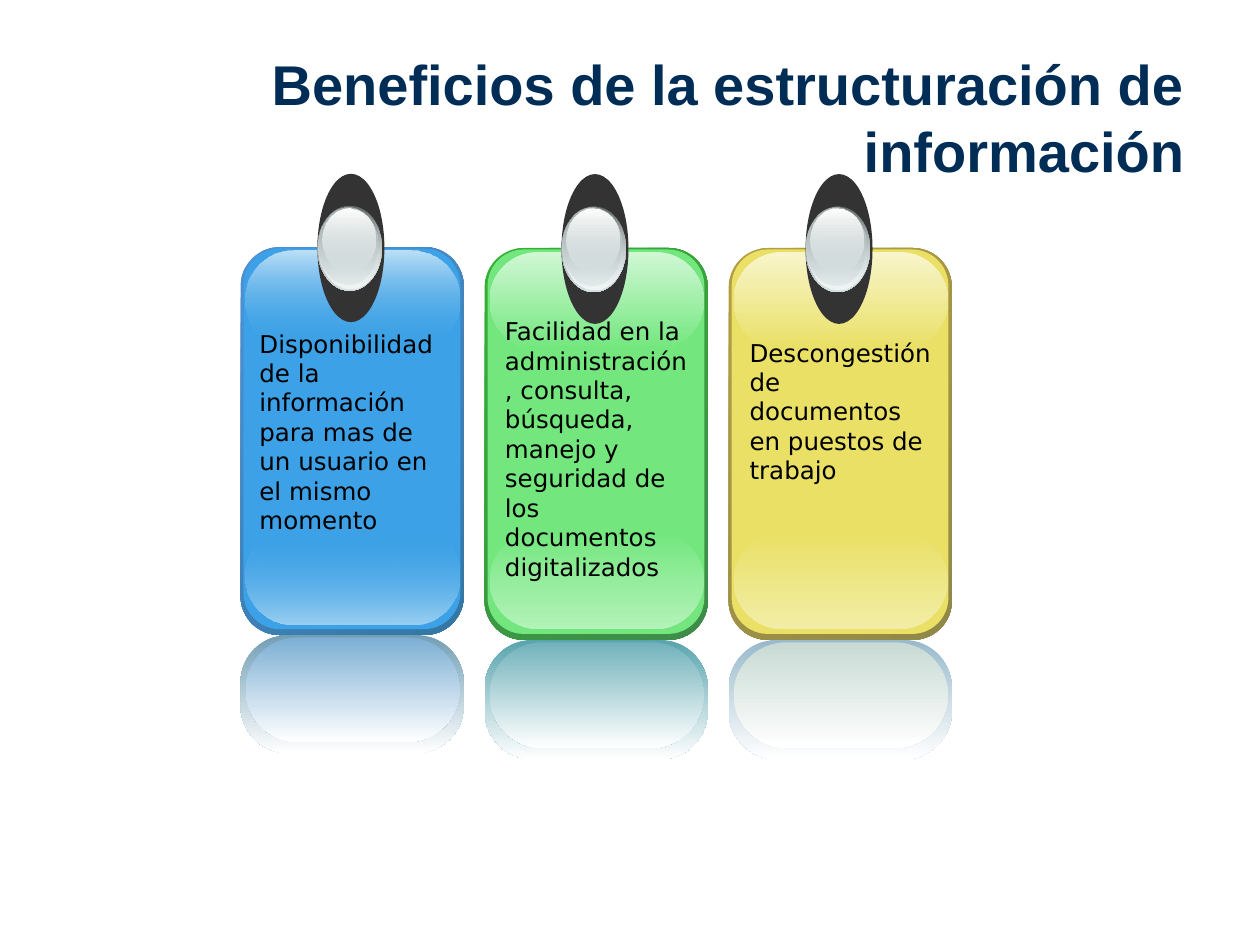
from dataclasses import dataclass
from typing import NamedTuple, Optional

from lxml import etree
from pptx import Presentation
from pptx import util as u
from pptx.dml.color import RGBColor
from pptx.enum import shapes, text
from pptx.oxml.ns import qn

NAVY = RGBColor(0x00, 0x2D, 0x56)
BLACK = RGBColor(0x00, 0x00, 0x00)
WHITE = RGBColor(0xFF, 0xFF, 0xFF)
CHARCOAL = RGBColor(0x33, 0x33, 0x33)
STEEL = RGBColor(0x63, 0x68, 0x69)
GREY = RGBColor(0xAA, 0xB2, 0xB3)
SILVER = RGBColor(0xD6, 0xE1, 0xE2)
PALE = RGBColor(0xF1, 0xF5, 0xF5)

BLUE = RGBColor(0x3C, 0xA1, 0xE6)
BLUE_EDGE = RGBColor(0x4E, 0x91, 0xD4), RGBColor(0x34, 0x77, 0xA4)
BLUE_SHINE = RGBColor(0xBE, 0xE0, 0xF7), RGBColor(0x9B, 0xCF, 0xF2)
BLUE_MIRROR = RGBColor(0x72, 0x9E, 0xB4), RGBColor(0x7D, 0xAF, 0xD4)
GREEN = RGBColor(0x73, 0xE7, 0x7E)
GREEN_EDGE = RGBColor(0x34, 0xB0, 0x34), RGBColor(0x3F, 0x8B, 0x4A)
GREEN_SHINE = RGBColor(0xD0, 0xF7, 0xD4), RGBColor(0xB3, 0xF2, 0xB9)
GREEN_MIRROR = RGBColor(0x58, 0xA4, 0xAE), RGBColor(0x72, 0xB2, 0xBB)
YELLOW = RGBColor(0xE9, 0xE0, 0x65)
YELLOW_EDGE = RGBColor(0xB5, 0x9F, 0x43), RGBColor(0x8F, 0x88, 0x49)
YELLOW_SHINE = RGBColor(0xF8, 0xF5, 0xCC), RGBColor(0xF2, 0xED, 0xA6)
YELLOW_MIRROR = RGBColor(0x99, 0xBA, 0xCC), RGBColor(0xC8, 0xDA, 0xD4)

LEFT, PITCH = 4.85, 4.92  # first card and card spacing, in cm


class Stop(NamedTuple):
    color: RGBColor
    opacity: int = 100


class Layer(NamedTuple):
    """A shape placed in cm from the top left corner of its card."""
    x: float
    y: float
    w: float
    h: float
    start: Stop
    end: Optional[Stop] = None  # no end stop means a solid fill
    corner: Optional[float] = None  # no corner means an ellipse
    angle: int = 90


@dataclass
class Card:
    words: str
    face: RGBColor
    edge: tuple
    shine: tuple  # top, bottom
    mirror: tuple  # outer, inner
    text_x: float
    text_y: float
    text_h: float
    top: float = 5.0
    scale: float = 1.0
    fade: int = 100  # opacity where the shine meets the face


CARDS = [
    Card("Disponibilidad de la información para mas de un usuario en el mismo momento",
         BLUE, BLUE_EDGE, BLUE_SHINE, BLUE_MIRROR, 0.13, 6.5, 4.45,
         top=4.98, scale=0.99, fade=0),
    Card("Facilidad en la administración, consulta, búsqueda, manejo y seguridad "
         "de los documentos digitalizados",
         GREEN, GREEN_EDGE, GREEN_SHINE, GREEN_MIRROR, 0.16, 6.25, 5.64),
    Card("Descongestión de documentos en puestos de trabajo",
         YELLOW, YELLOW_EDGE, YELLOW_SHINE, YELLOW_MIRROR, 0.17, 6.68, 3.25),
]

PIN = [
    Layer(1.55, -1.49, 1.35, 3.02, Stop(CHARCOAL)),
    Layer(1.55, -0.84, 1.3, 1.73, Stop(STEEL), Stop(SILVER)),
    Layer(1.57, -0.84, 1.27, 1.68, Stop(SILVER, 0), Stop(PALE)),
    Layer(1.57, -0.81, 1.19, 1.57, Stop(GREY), Stop(SILVER, 48)),
    Layer(1.65, -0.79, 1.07, 1.27, Stop(WHITE), Stop(SILVER, 38)),
]


def card_layers(c: Card) -> list:
    blend, white = Stop(c.face, c.fade), Stop(WHITE)
    return [
        Layer(0, 0, 4.5, 7.9, Stop(c.edge[0]), Stop(c.edge[1]), 0.175, 45),
        Layer(0.06, 0.03, 4.37, 7.75, Stop(c.face), None, 0.167),
        Layer(0.1, 5.72, 4.32, 1.96, blend, Stop(c.shine[1]), 0.5),
        Layer(0.1, 0.08, 4.32, 1.96, Stop(c.shine[0]), blend, 0.5),
        Layer(0, 7.9, 4.5, 2.41, Stop(c.mirror[0]), white, 0.404),
        Layer(0.1, 7.95, 4.32, 2.13, Stop(c.mirror[1]), white, 0.5),
    ]


def add_layer(parent, layer: Layer, x: float, y: float, scale: float) -> None:
    preset = shapes.MSO_SHAPE.OVAL if layer.corner is None else shapes.MSO_SHAPE.ROUNDED_RECTANGLE
    s = parent.add_shape(preset, u.Cm(x + layer.x), u.Cm(y + layer.y * scale),
                         u.Cm(layer.w), u.Cm(layer.h * scale))
    s.shadow.inherit = False
    s.line.fill.background()
    if layer.corner is not None:
        s.adjustments[0] = layer.corner
    if layer.end is None:
        s.fill.solid()
        s.fill.fore_color.rgb = layer.start.color
        return
    s.fill.gradient()
    s.fill.gradient_angle = 360 - layer.angle
    stops = (layer.start, layer.end)
    for grad_stop, stop in zip(s.fill.gradient_stops, stops):
        grad_stop.color.rgb = stop.color
    for clr, stop in zip(s.element.spPr.iter(qn("a:srgbClr")), stops):
        if stop.opacity < 100:
            etree.SubElement(clr, qn("a:alpha"), val=str(stop.opacity * 1000))


def add_text(parent, words: str, box: tuple, fmt: dict, color: RGBColor,
             align=text.PP_ALIGN.LEFT, anchor=text.MSO_ANCHOR.TOP) -> None:
    tf = parent.add_textbox(*(u.Cm(v) for v in box)).text_frame
    tf.word_wrap = True
    tf.vertical_anchor = anchor
    p = tf.paragraphs[0]
    p.alignment = align
    r = p.add_run()
    r.text = words
    for name, value in fmt.items():
        setattr(r.font, name, value)
    r.font.color.rgb = color


def add_card(parent, c: Card, x: float) -> None:
    group = parent.add_group_shape().shapes
    for layer in card_layers(c) + PIN:
        add_layer(group, layer, x, c.top, c.scale)
    add_text(group, c.words, (x + c.text_x, c.text_y, 4.29, c.text_h),
             {"name": "DejaVu Sans", "size": u.Pt(14)}, BLACK)


def main() -> None:
    prs = Presentation()
    prs.slide_width, prs.slide_height = u.Cm(25.4), u.Cm(19.05)
    slide = prs.slides.add_slide(prs.slide_layouts[6])

    # Title
    add_text(slide.shapes, "Beneficios de la estructuración de información",
             (1.27, 0.76, 22.86, 3.18),
             {"name": "Arial", "size": u.Pt(32), "bold": True}, NAVY,
             text.PP_ALIGN.RIGHT, text.MSO_ANCHOR.MIDDLE)

    # Pinned cards with their reflections
    for i, card in enumerate(CARDS):
        add_card(slide.shapes, card, LEFT + i * PITCH)

    prs.save("out.pptx")


if __name__ == "__main__":
    main()
